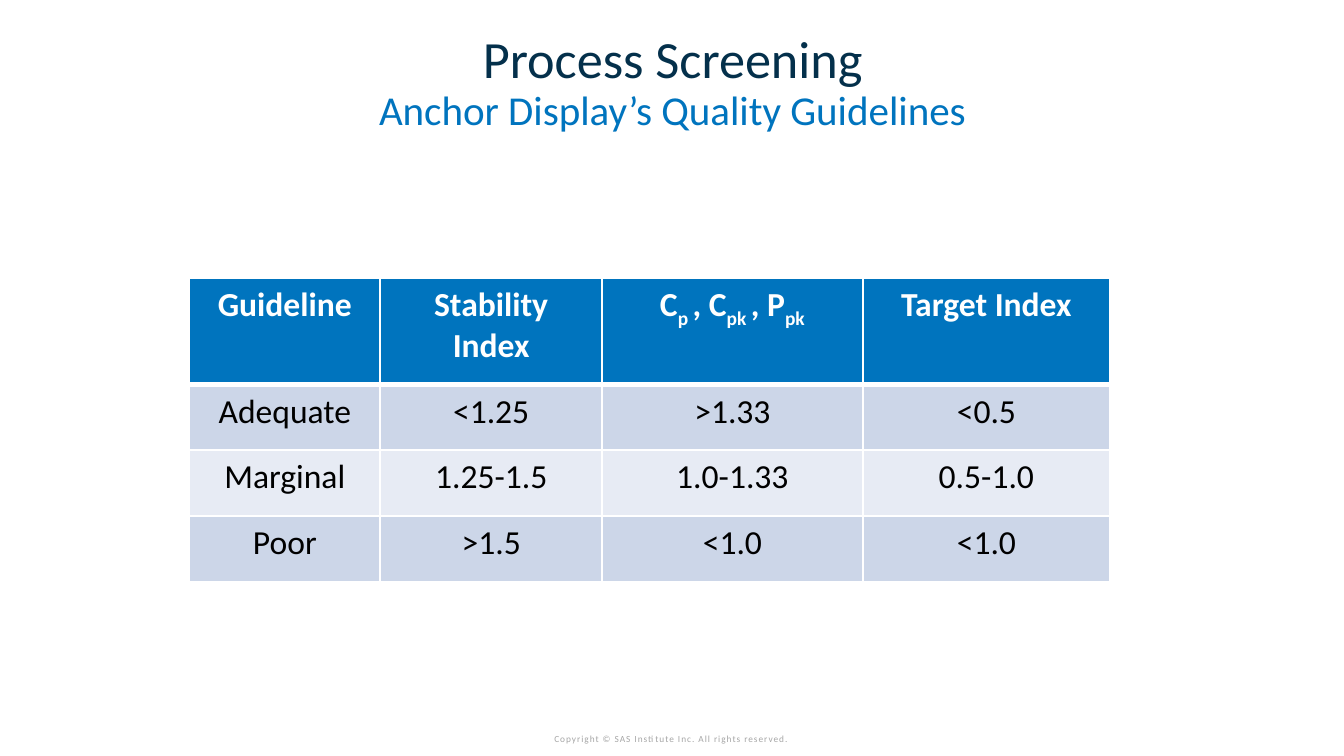
from dataclasses import dataclass

from lxml import etree
from pptx import Presentation
from pptx.dml.color import RGBColor
from pptx.enum.text import MSO_ANCHOR, PP_ALIGN
from pptx.oxml.ns import qn
from pptx.util import Inches, Pt

CENTER = PP_ALIGN.CENTER
MIDDLE = MSO_ANCHOR.MIDDLE
BOTTOM = MSO_ANCHOR.BOTTOM
FONT = "Calibri"
SLIDE_WIDTH = 10
SLIDE_HEIGHT = SLIDE_WIDTH * 9 / 16
COLORS = {
    "navy": "04304B",
    "blue": "0074BE",
    "gray": "A6A6A6",
    "white": "FFFFFF",
    "black": "000000",
    "band_dark": "CCD6E8",
    "band_light": "E7EBF4",
}
SUBSCRIPT = -25


@dataclass(frozen=True)
class Caption:
    text: str
    left: float
    top: float
    width: float
    height: float
    size: float
    color: str
    anchor: MSO_ANCHOR = MIDDLE
    spacing: int = 0


@dataclass(frozen=True)
class RowStyle:
    fill: str
    color: str
    bold: bool
    height: float
    top_line: float
    bottom_line: float


CAPTIONS = [
    Caption("Copyright © SAS Institute Inc. All rights reserved.",
            3.62, 5.4, 2.75, 0.19, 5, "gray", BOTTOM, 50),
    Caption("Process Screening", 0.69, 0.18, 8.63, 0.5, 28, "navy"),
    Caption("Anchor Display’s Quality Guidelines", 0.69, 0.59, 8.63, 0.44, 22, "blue"),
]
HEADER = RowStyle("blue", "white", True, 0.79, 1, 3)
FIRST_BAND = RowStyle("band_dark", "black", False, 0.49, 3, 1)
LIGHT_BAND = RowStyle("band_light", "black", False, 0.49, 1, 1)
DARK_BAND = RowStyle("band_dark", "black", False, 0.49, 1, 1)
ROW_STYLES = [HEADER, FIRST_BAND, LIGHT_BAND, DARK_BAND]
COLUMN_WIDTHS = [1.42, 1.65, 1.94, 1.84]
CAPABILITY_RUNS = [("C", 0), ("p ", SUBSCRIPT), (", C", 0),
                   ("pk ", SUBSCRIPT), (", P", 0), ("pk", SUBSCRIPT)]
GUIDELINES = [
    ["Guideline", "Stability Index", CAPABILITY_RUNS, "Target Index"],
    ["Adequate", "<1.25", ">1.33", "<0.5"],
    ["Marginal", "1.25-1.5", "1.0-1.33", "0.5-1.0"],
    ["Poor", ">1.5", "<1.0", "<1.0"],
]


def rgb(name: str) -> RGBColor:
    return RGBColor.from_string(COLORS[name])


def add_run(paragraph, text: str, size: float, color: str, bold: bool = False):
    run = paragraph.add_run()
    run.text = text
    run.font.name = FONT
    run.font.size = Pt(size)
    run.font.bold = bold
    run.font.color.rgb = rgb(color)
    return run


def add_caption(slide, caption: Caption) -> None:
    shape = slide.shapes.add_textbox(Inches(caption.left), Inches(caption.top),
                                     Inches(caption.width), Inches(caption.height))
    frame = shape.text_frame
    frame.word_wrap = True
    frame.vertical_anchor = caption.anchor
    paragraph = frame.paragraphs[0]
    paragraph.alignment = CENTER
    run = add_run(paragraph, caption.text, caption.size, caption.color)
    if caption.spacing:
        run.font._element.set("spc", str(caption.spacing))


def add_borders(cell, style: RowStyle) -> None:
    properties = cell._tc.get_or_add_tcPr()
    widths = {"lnL": 1, "lnR": 1, "lnT": style.top_line, "lnB": style.bottom_line}
    for index, (tag, width) in enumerate(widths.items()):
        line = etree.Element(qn(f"a:{tag}"), w=str(Pt(width)))
        fill = etree.SubElement(line, qn("a:solidFill"))
        etree.SubElement(fill, qn("a:srgbClr"), val=COLORS["white"])
        properties.insert(index, line)


def fill_cell(cell, content: str | list[tuple[str, int]], style: RowStyle) -> None:
    cell.fill.solid()
    cell.fill.fore_color.rgb = rgb(style.fill)
    add_borders(cell, style)
    paragraph = cell.text_frame.paragraphs[0]
    paragraph.alignment = CENTER
    pieces = [(content, 0)] if isinstance(content, str) else content
    for text, baseline in pieces:
        run = add_run(paragraph, text, 18, style.color, style.bold)
        if baseline:
            run.font._element.set("baseline", str(baseline * 1000))


def add_guideline_table(slide) -> None:
    height = sum(style.height for style in ROW_STYLES)
    shape = slide.shapes.add_table(len(GUIDELINES), len(COLUMN_WIDTHS), Inches(1.41),
                                   Inches(2.07), Inches(sum(COLUMN_WIDTHS)), Inches(height))
    table = shape.table
    for column, width in zip(table.columns, COLUMN_WIDTHS):
        column.width = Inches(width)
    for row, style, contents in zip(table.rows, ROW_STYLES, GUIDELINES):
        row.height = Inches(style.height)
        for cell, content in zip(row.cells, contents):
            fill_cell(cell, content, style)


def main() -> None:
    """Build the process screening guidelines slide."""
    presentation = Presentation()
    presentation.slide_width = Inches(SLIDE_WIDTH)
    presentation.slide_height = Inches(SLIDE_HEIGHT)
    slide = presentation.slides.add_slide(presentation.slide_layouts[6])
    slide.background.fill.solid()
    slide.background.fill.fore_color.rgb = rgb("white")
    for caption in CAPTIONS:
        add_caption(slide, caption)
    add_guideline_table(slide)
    presentation.save("out.pptx")


if __name__ == "__main__":
    main()
